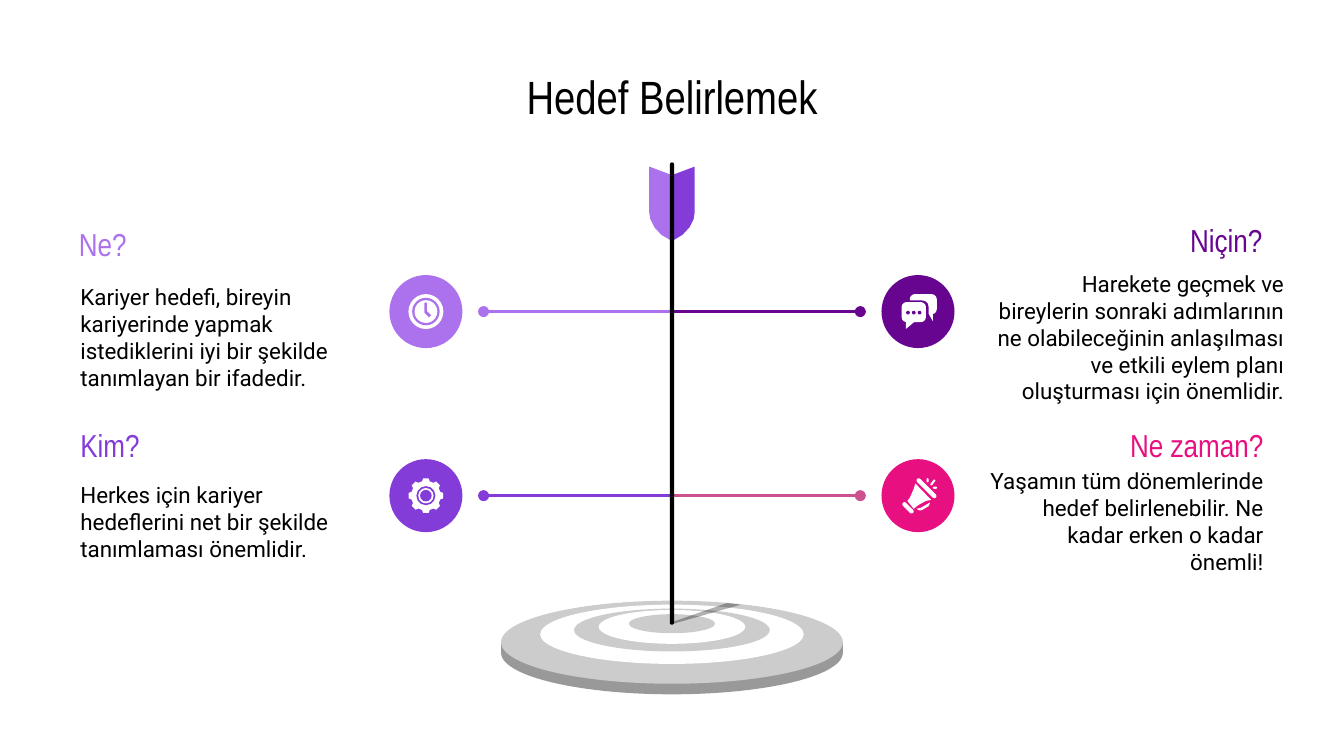
"""Build the goal-setting slide: four questions around an arrow in a target."""
import math

import pptx
import pptx.dml.color
import pptx.enum.shapes
import pptx.enum.text
import pptx.oxml
import pptx.oxml.ns
import pptx.oxml.xmlchemy
import pptx.util

Cm = pptx.util.Cm
Pt = pptx.util.Pt
RGBColor = pptx.dml.color.RGBColor
MSO = pptx.enum.shapes.MSO_SHAPE
ALIGN = pptx.enum.text.PP_ALIGN
OxmlElement = pptx.oxml.xmlchemy.OxmlElement
qn = pptx.oxml.ns.qn

BLACK = RGBColor(0x00, 0x00, 0x00)
WHITE = RGBColor(0xFF, 0xFF, 0xFF)
GREY = RGBColor(0xCC, 0xCC, 0xCC)
DARK_GREY = RGBColor(0x99, 0x99, 0x99)
LILAC = RGBColor(0xAC, 0x71, 0xEC)
VIOLET = RGBColor(0x83, 0x3C, 0xD8)
PURPLE = RGBColor(0x67, 0x05, 0x91)
PINK = RGBColor(0xE8, 0x10, 0x80)
ROSE = RGBColor(0xCC, 0x51, 0x91)

HEAD_FONT = "Arial Narrow"
BODY_FONT = "Roboto"
CENTRE = 12.7
TOP_ROW, BOTTOM_ROW = 5.89, 9.37
ICON_REACH, LINE_REACH = 4.65, 3.56
TEXT_W, HEAD_H = 5.69, 1.19


def paint(sp, colour):
    """Give a shape a plain fill without line or shadow."""
    sp.shadow.inherit = False
    sp.fill.solid()
    sp.fill.fore_color.rgb = colour
    sp.line.fill.background()
    return sp


def add_centred(s, cx, cy, w, h, colour, kind=MSO.OVAL, angle=0):
    """Add a preset shape around its centre."""
    sp = s.shapes.add_shape(kind, Cm(cx - w / 2), Cm(cy - h / 2), Cm(w), Cm(h))
    sp.rotation = angle
    return paint(sp, colour)


def add_bar(s, cx, cy, length, thickness, colour, angle=0):
    """Add a bar with round ends."""
    sp = add_centred(s, cx, cy, length, thickness, colour, MSO.ROUNDED_RECTANGLE, angle)
    sp.adjustments[0] = 0.5


def add_polygon(s, cx, cy, points, colour):
    """Add a closed outline whose points are offsets from a centre."""
    pts = [(Cm(cx + x), Cm(cy + y)) for x, y in points]
    fb = s.shapes.build_freeform(*pts[0], scale=1.0)
    fb.add_line_segments(pts[1:], close=True)
    return paint(fb.convert_to_shape(), colour)


def write(tf, text, size, font, colour, align):
    """Put one formatted run into a text frame."""
    tf.word_wrap = True
    tf.vertical_anchor = pptx.enum.text.MSO_ANCHOR.MIDDLE
    tf.margin_left = tf.margin_right = tf.margin_top = tf.margin_bottom = Cm(0.25)
    p = tf.paragraphs[0]
    p.alignment = align
    r = p.add_run()
    r.text = text
    r.font.size = Pt(size)
    r.font.name = font
    r.font.color.rgb = colour


def add_title(s, text):
    """Place the slide title."""
    sp = s.shapes.title
    sp.left, sp.top, sp.width, sp.height = Cm(1.27), Cm(1.14), Cm(22.86), Cm(1.35)
    write(sp.text_frame, text, 25, HEAD_FONT, BLACK, ALIGN.CENTER)


def add_text(s, box, *style):
    """Add a wrapped text box."""
    sp = s.shapes.add_textbox(*[Cm(v) for v in box])
    write(sp.text_frame, *style)


def add_branch(s, side, y, colour):
    """Draw a line from the arrow shaft to a round end mark."""
    c = s.shapes.add_connector(
        pptx.enum.shapes.MSO_CONNECTOR.STRAIGHT,
        Cm(CENTRE), Cm(y), Cm(CENTRE + side * LINE_REACH), Cm(y))
    c.line.color.rgb = colour
    c.line.width = Pt(1.5)
    tail = OxmlElement("a:tailEnd")
    tail.set("type", "oval")
    c._element.spPr.find(qn("a:ln")).append(tail)
    c._element.spPr.append(OxmlElement("a:effectLst"))


def draw_clock(s, x, y, colour):
    """Draw a clock icon."""
    for d, c in ((0.66, WHITE), (0.52, colour), (0.43, WHITE)):
        add_centred(s, x, y, d, d, c)
    hands = [(-0.03, -0.17), (0.02, -0.17), (0.02, -0.01), (0.1, 0.07), (0.06, 0.11), (-0.03, 0.02)]
    add_polygon(s, x, y, hands, colour)


def draw_chat(s, x, y, colour):
    """Draw two overlapping speech bubbles."""
    bubbles = (
        (0.1, -0.14, 0.51, 0.38, WHITE, [(0.2, 0.04), (0.28, 0.18), (0.28, 0.04)]),
        (-0.08, 0.03, 0.56, 0.48, colour, []),
        (-0.08, 0.01, 0.46, 0.38, WHITE, [(-0.23, 0.18), (-0.23, 0.33), (-0.05, 0.18)]))
    for dx, dy, w, h, c, tail in bubbles:
        sp = add_centred(s, x + dx, y + dy, w, h, c, MSO.ROUNDED_RECTANGLE)
        sp.adjustments[0] = 0.25
        if tail:
            add_polygon(s, x, y, tail, c)
    for i in range(3):
        add_centred(s, x - 0.19 + 0.11 * i, y + 0.02, 0.07, 0.07, colour)


def draw_gear(s, x, y, colour):
    """Draw a gear with eight teeth."""
    profile = ((-15, 0.28), (-9, 0.33), (9, 0.33), (15, 0.28))
    teeth = [(r * math.sin(math.radians(45 * k + a)), -r * math.cos(math.radians(45 * k + a)))
             for k in range(8) for a, r in profile]
    add_polygon(s, x, y, teeth, WHITE)
    for d, c in ((0.36, colour), (0.29, WHITE), (0.22, colour)):
        add_centred(s, x, y, d, d, c)


def draw_megaphone(s, x, y, colour):
    """Draw a megaphone with sound rays."""
    cone = [(-0.05, -0.23), (-0.08, -0.13), (-0.15, 0.03), (-0.2, 0.1),
            (-0.08, 0.25), (0, 0.18), (0.15, 0.1), (0.25, 0.08)]
    grip = [(0.23, 0.13), (0.19, 0.15), (0.05, 0.23), (-0.03, 0.25),
            (0.03, 0.28), (0.06, 0.28), (0.2, 0.2)]
    for outline in (cone, grip):
        add_polygon(s, x, y, outline, WHITE)
    bars = ((0.16, -0.14, 0.5, 0.08, 45), (-0.19, 0.23, 0.27, 0.08, 45),
            (0.28, -0.25, 0.13, 0.04, -52), (0.18, -0.29, 0.08, 0.04, 90),
            (0.32, -0.15, 0.08, 0.04, 0))
    for dx, dy, length, thickness, angle in bars:
        add_bar(s, x + dx, y + dy, length, thickness, WHITE, angle)


def add_topic(s, side, y, colours, draw_icon, head, head_at, body, body_box):
    """Add one question with its text, icon and branch."""
    colour, line_colour = colours
    align = ALIGN.RIGHT if side > 0 else ALIGN.LEFT
    x = CENTRE + side * ICON_REACH
    add_branch(s, side, y, line_colour)
    add_centred(s, x, y, 1.38, 1.38, colour)
    draw_icon(s, x, y, colour)
    add_text(s, (*head_at, TEXT_W, HEAD_H), head, 17, HEAD_FONT, colour, align)
    add_text(s, body_box, body, 12, BODY_FONT, BLACK, align)


def add_target(s):
    """Draw the target disc and the arrow standing in it."""
    add_centred(s, CENTRE, 12.34, 6.46, 1.57, DARK_GREY)
    add_centred(s, CENTRE, 12.24, 6.46, 0.2, DARK_GREY, MSO.RECTANGLE)
    rings = ((12.14, 6.46, 1.57, GREY), (11.99, 4.98, 1.12, WHITE), (11.91, 3.7, 0.81, GREY),
             (11.85, 2.77, 0.64, WHITE), (11.79, 1.63, 0.36, GREY))
    for y, w, h, colour in rings:
        add_centred(s, CENTRE, y, w, h, colour)
    cast = [(1.04, 11.4), (0, 11.76), (-0.02, 11.79), (0.03, 11.79), (1.3, 11.43)]
    sp = add_polygon(s, CENTRE, 0, cast, BLACK)
    alpha = OxmlElement("a:alpha")
    alpha.set("val", "31000")
    sp._element.spPr.find(".//" + qn("a:srgbClr")).append(alpha)
    feather = [(0.03, 3.3), (0.43, 3.15), (0.43, 4.01), (0.41, 4.14),
               (0.33, 4.3), (0.2, 4.44), (0.03, 4.54)]
    for side, colour in ((1, VIOLET), (-1, LILAC)):
        add_polygon(s, CENTRE, 0, [(side * x, y) for x, y in feather], colour)
    add_bar(s, CENTRE, 7.44, 0.08, 8.74, BLACK)


def main():
    """Build and save the slide."""
    prs = pptx.Presentation()
    prs.slide_width, prs.slide_height = Cm(25.4), Cm(14.29)
    s = prs.slides.add_slide(prs.slide_layouts[5])
    add_title(s, "Hedef Belirlemek")
    add_topic(s, 1, BOTTOM_ROW, (PINK, ROSE), draw_megaphone, "Ne zaman?", (18.44, 7.82),
              "Yaşamın tüm dönemlerinde hedef belirlenebilir. Ne kadar erken o kadar önemli!",
              (18.44, 8.79, TEXT_W, 2.13))
    add_topic(s, -1, BOTTOM_ROW, (VIOLET, VIOLET), draw_gear, "Kim?", (1.27, 7.82),
              "Herkes için kariyer hedeflerini net bir şekilde tanımlaması önemlidir.",
              (1.27, 8.79, TEXT_W, 2.13))
    add_topic(s, 1, TOP_ROW, (PURPLE, PURPLE), draw_chat, "Niçin?", (18.42, 3.94),
              "Harekete geçmek ve bireylerin sonraki adımlarının ne olabileceğinin "
              "anlaşılması ve etkili eylem planı oluşturması için önemlidir.",
              (18.42, 5.03, 6.1, 2.69))
    add_topic(s, -1, TOP_ROW, (LILAC, LILAC), draw_clock, "Ne?", (1.24, 4.01),
              "Kariyer hedefi, bireyin kariyerinde yapmak istediklerini iyi bir şekilde "
              "tanımlayan bir ifadedir.", (1.27, 5.31, TEXT_W, 2.13))
    add_target(s)
    prs.save("out.pptx")


if __name__ == "__main__":
    main()
